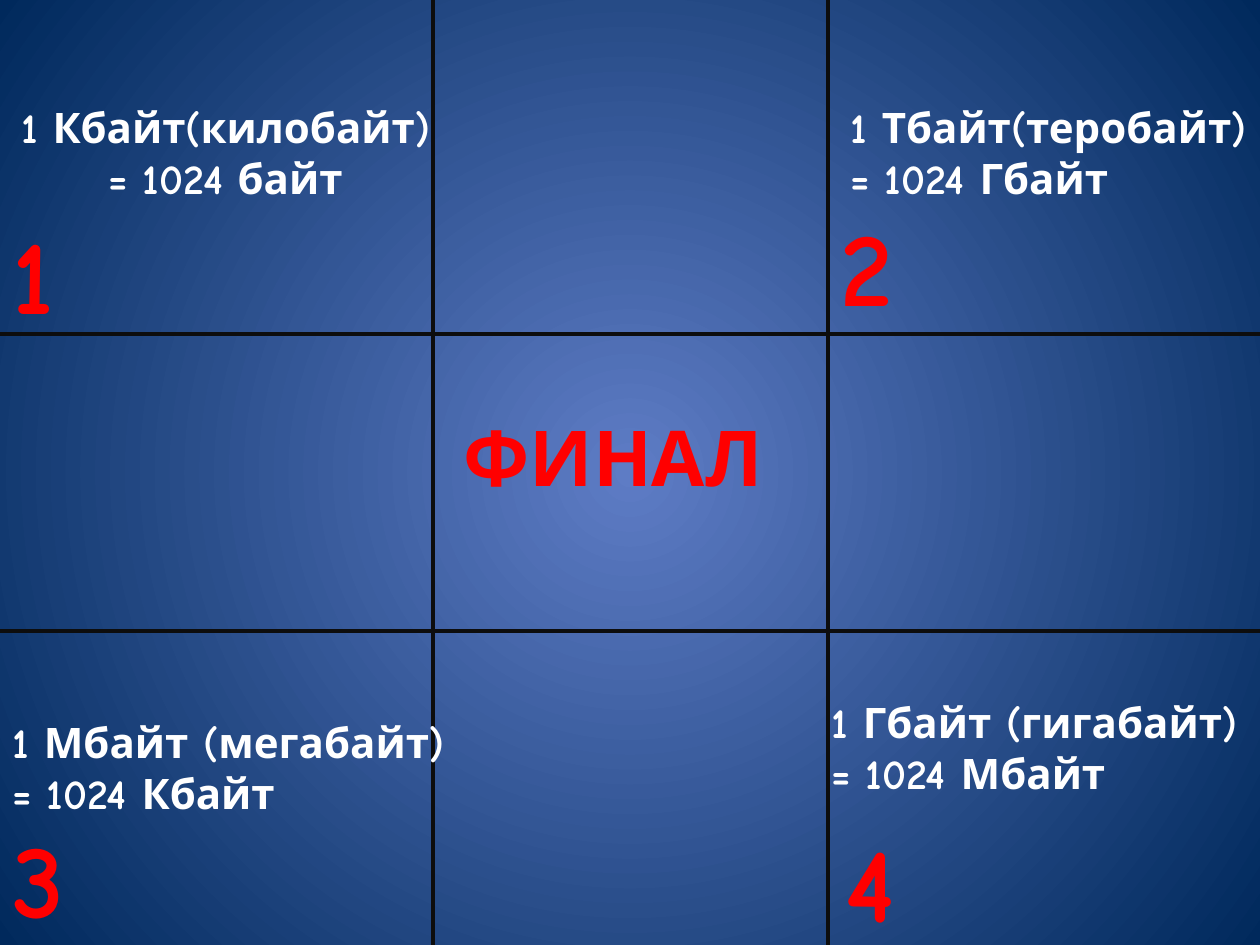
from dataclasses import dataclass

from lxml.etree import SubElement
from pptx import Presentation
from pptx.dml.color import RGBColor
from pptx.enum.shapes import MSO_CONNECTOR as Connector
from pptx.enum.text import MSO_AUTO_SIZE as AutoSize, PP_ALIGN as Align
from pptx.oxml.ns import qn
from pptx.util import Inches, Pt

COLUMNS, ROWS = 100, 75
UNIT = Inches(0.1)


@dataclass(frozen=True)
class Theme:
    font: str = "Comic Neue"
    center: str = "5E7CC5"
    edge: str = "00295C"
    rule: str = "0D0D0D"
    accent: str = "FF0000"
    body: str = "FFFFFF"
    rule_width: float = 2.25
    number_size: int = 60
    fact_size: int = 24
    final_size: int = 44


@dataclass(frozen=True)
class Area:
    column: float
    row: float
    columns: float
    rows: float


@dataclass(frozen=True)
class Corner:
    number: str
    number_column: float
    number_row: float
    fact: str
    fact_area: Area
    align: Align = Align.LEFT


THEME = Theme()
RULE_COLUMNS = (34.4, 65.7)
RULE_ROWS = (26.5, 50.1)
CORNERS = (
    Corner("1", 0, 16.1, "1 Кбайт(килобайт) = 1024 байт",
           Area(0, 7.6, 35.8, 9.1), Align.CENTER),
    Corner("2", 65.7, 15.5, "1 Тбайт(теробайт) = 1024 Гбайт",
           Area(66.5, 7.6, 33.5, 9.1)),
    Corner("3", 0, 64.1, "1 Мбайт (мегабайт)\n= 1024 Кбайт",
           Area(0, 56.4, 36.6, 9.1)),
    Corner("4", 66.1, 64.4, "1 Гбайт (гигабайт)\n= 1024 Мбайт",
           Area(65, 54.8, 35, 9.1)),
)


def grid(count: float) -> int:
    return round(count * UNIT)


def paint_background(slide) -> None:
    fill = slide.background.fill
    fill.gradient()
    for stop, color in zip(fill.gradient_stops, (THEME.center, THEME.edge)):
        stop.color.rgb = RGBColor.from_string(color)
    gradient = next(slide.element.iter(qn("a:gradFill")))
    gradient.remove(gradient.find(qn("a:lin")))
    circle = SubElement(gradient, qn("a:path"), {"path": "circle"})
    SubElement(circle, qn("a:fillToRect"), dict.fromkeys("ltrb", "50000"))


def draw_rule(slide, start: tuple[float, float], end: tuple[float, float]) -> None:
    rule = slide.shapes.add_connector(
        Connector.STRAIGHT, *map(grid, start), *map(grid, end))
    rule.line.color.rgb = RGBColor.from_string(THEME.rule)
    rule.line.width = Pt(THEME.rule_width)
    SubElement(rule.element.spPr, qn("a:effectLst"))


def write(shapes, text: str, area: Area, size: int, color: str,
          align: Align = Align.LEFT) -> None:
    frame = shapes.add_textbox(
        grid(area.column), grid(area.row),
        grid(area.columns), grid(area.rows)).text_frame
    frame.text = text
    frame.word_wrap = True
    frame.auto_size = AutoSize.SHAPE_TO_FIT_TEXT
    for paragraph in frame.paragraphs:
        paragraph.alignment = align
        for run in paragraph.runs:
            run.font.name = THEME.font
            run.font.size = Pt(size)
            run.font.bold = True
            run.font.color.rgb = RGBColor.from_string(color)


def draw_corner(slide, corner: Corner) -> None:
    shapes = slide.shapes.add_group_shape().shapes
    number_area = Area(corner.number_column, corner.number_row, 11.4, 11.1)
    write(shapes, corner.number, number_area, THEME.number_size, THEME.accent)
    write(shapes, corner.fact, corner.fact_area, THEME.fact_size, THEME.body,
          corner.align)


def main() -> None:
    deck = Presentation()
    deck.slide_width, deck.slide_height = grid(COLUMNS), grid(ROWS)
    slide = deck.slides.add_slide(deck.slide_layouts[6])
    paint_background(slide)
    for column in RULE_COLUMNS:
        draw_rule(slide, (column, 0), (column, ROWS))
    for row in RULE_ROWS:
        draw_rule(slide, (0, row), (COLUMNS, row))
    for corner in CORNERS:
        draw_corner(slide, corner)
    write(slide.shapes, "ФИНАЛ", Area(35.8, 32, 29.9, 8.4),
          THEME.final_size, THEME.accent)
    deck.save("out.pptx")


if __name__ == "__main__":
    main()
